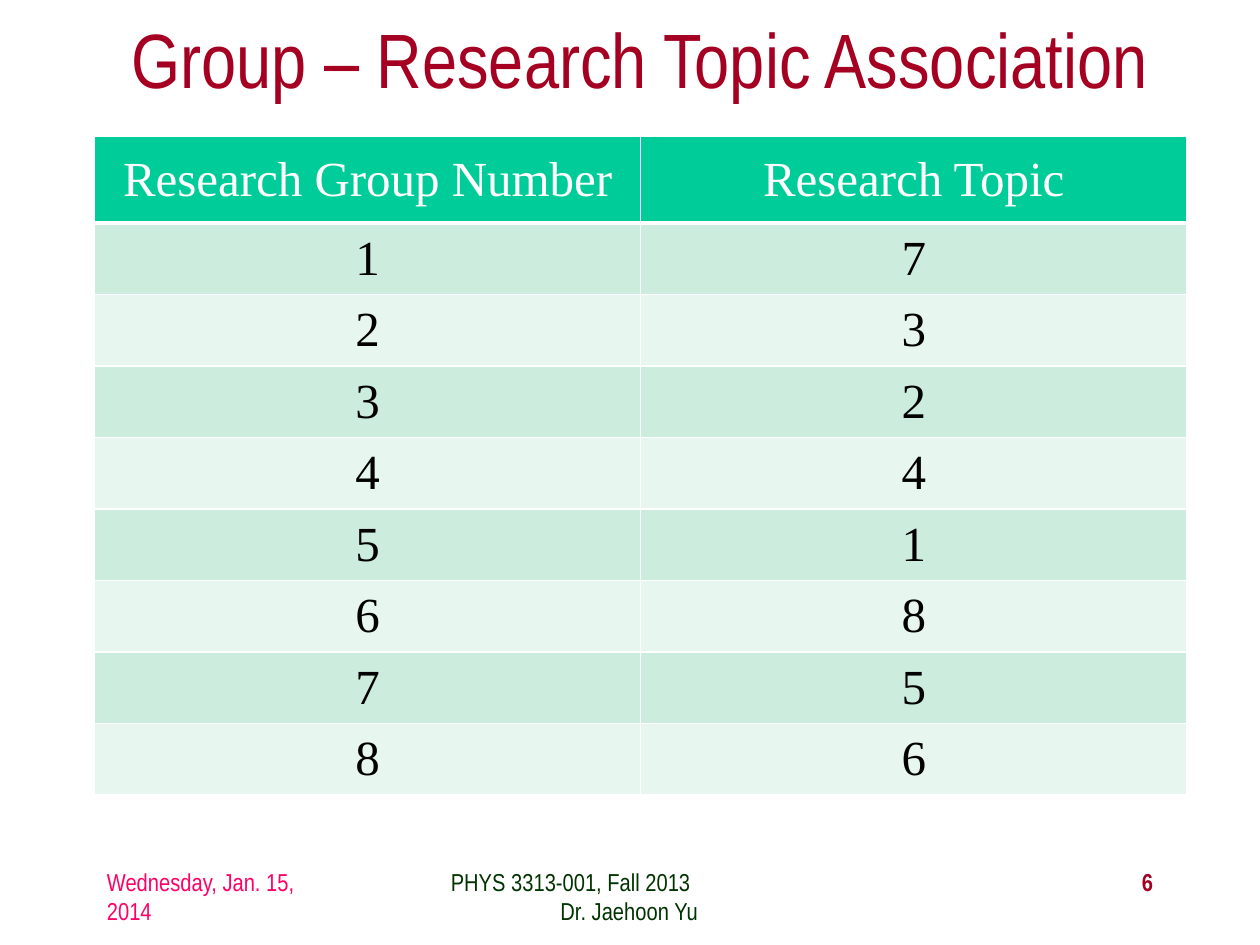
from lxml.etree import SubElement
from pptx import Presentation
from pptx.dml.color import RGBColor
from pptx.enum.text import MSO_ANCHOR, MSO_AUTO_SIZE, PP_ALIGN
from pptx.oxml.ns import qn
from pptx.util import Inches, Pt


def rgb(color):
    return RGBColor.from_string(color)


def style(p, size, font, color, align=PP_ALIGN.LEFT, bold=False):
    p.alignment = align
    p.font.size = Pt(size)
    p.font.name = font
    p.font.bold = bold
    p.font.color.rgb = rgb(color)


def place(sp, left, top, width, height):
    sp.left, sp.top = Inches(left), Inches(top)
    sp.width, sp.height = Inches(width), Inches(height)


def add_title(s, text):
    sp = s.shapes.title
    place(sp, 0.83, 0.17, 8.5, 0.58)
    tf = sp.text_frame
    tf.text = text
    tf.auto_size = MSO_AUTO_SIZE.NONE
    tf.vertical_anchor = MSO_ANCHOR.MIDDLE
    style(tf.paragraphs[0], 44, "Arial Narrow", "A50021", PP_ALIGN.CENTER)


def add_footer(s, left, width, lines, color, align=PP_ALIGN.LEFT, bold=False):
    sp = s.shapes.add_textbox(Inches(left), Inches(6.83), Inches(width), Inches(0.5))
    tf = sp.text_frame
    tf.word_wrap = True
    for i, (text, indent) in enumerate(lines):
        p = tf.add_paragraph() if i else tf.paragraphs[0]
        p.text = text
        p._p.get_or_add_pPr().set("marL", str(Inches(indent)))
        style(p, 14, "Arial Narrow", color, align, bold)


def set_borders(cell, color, bottom):
    tcPr = cell._tc.get_or_add_tcPr()
    for side, width in (("L", 1), ("R", 1), ("T", 1), ("B", bottom)):
        ln = SubElement(tcPr, qn(f"a:ln{side}"), w=str(Pt(width)))
        SubElement(SubElement(ln, qn("a:solidFill")), qn("a:srgbClr"), val=color)


def fill_cell(cell, text, color, fill, bottom=1):
    set_borders(cell, "FFFFFF", bottom)
    cell.fill.solid()
    cell.fill.fore_color.rgb = rgb(fill)
    cell.vertical_anchor = MSO_ANCHOR.MIDDLE
    cell.text = text
    p = cell.text_frame.paragraphs[0]
    style(p, 28, "Times New Roman", color, PP_ALIGN.CENTER)


def add_topic_table(s, header, topics):
    rows = [header] + [(str(i), str(t)) for i, t in enumerate(topics, 1)]
    heights = [0.69] + [0.53] * len(topics)
    table = s.shapes.add_table(len(rows), 2, Inches(0.75), Inches(1.08),
                               Inches(8.67), Inches(sum(heights))).table
    for i, (row, height) in enumerate(zip(rows, heights)):
        table.rows[i].height = Inches(height)
        for j, text in enumerate(row):
            if i == 0:
                fill_cell(table.cell(i, j), text, "FFFFFF", "00CC99", 3)
            else:
                fill = "CCECDE" if i % 2 else "E7F6EF"
                fill_cell(table.cell(i, j), text, "000000", fill)


def main():
    prs = Presentation()
    prs.slide_width, prs.slide_height = Inches(10), Inches(7.5)
    s = prs.slides.add_slide(prs.slide_layouts[5])
    add_title(s, "Group – Research Topic Association")
    add_footer(s, 0.75, 2.08, [("Wednesday, Jan. 15, 2014", 0)], "FF0066")
    add_footer(s, 3.42, 3.17, [("PHYS 3313-001, Fall 2013", 0.06),
                               ("Dr. Jaehoon Yu", 0.93)], "003300")
    add_footer(s, 7.17, 2.08, [("6", 0)], "A50021", PP_ALIGN.RIGHT, True)
    add_topic_table(s, ("Research Group Number", "Research Topic"),
                    [7, 3, 2, 4, 1, 8, 5, 6])
    prs.save("out.pptx")


if __name__ == "__main__":
    main()
